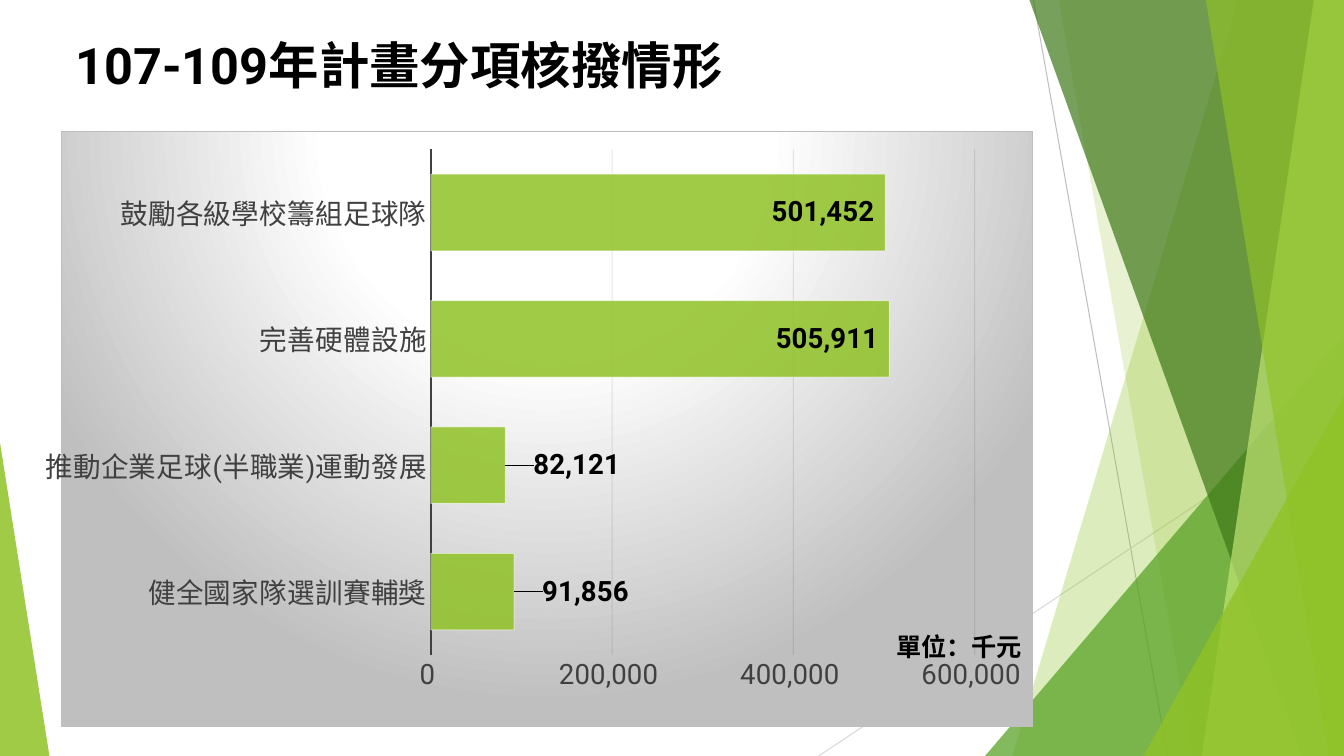
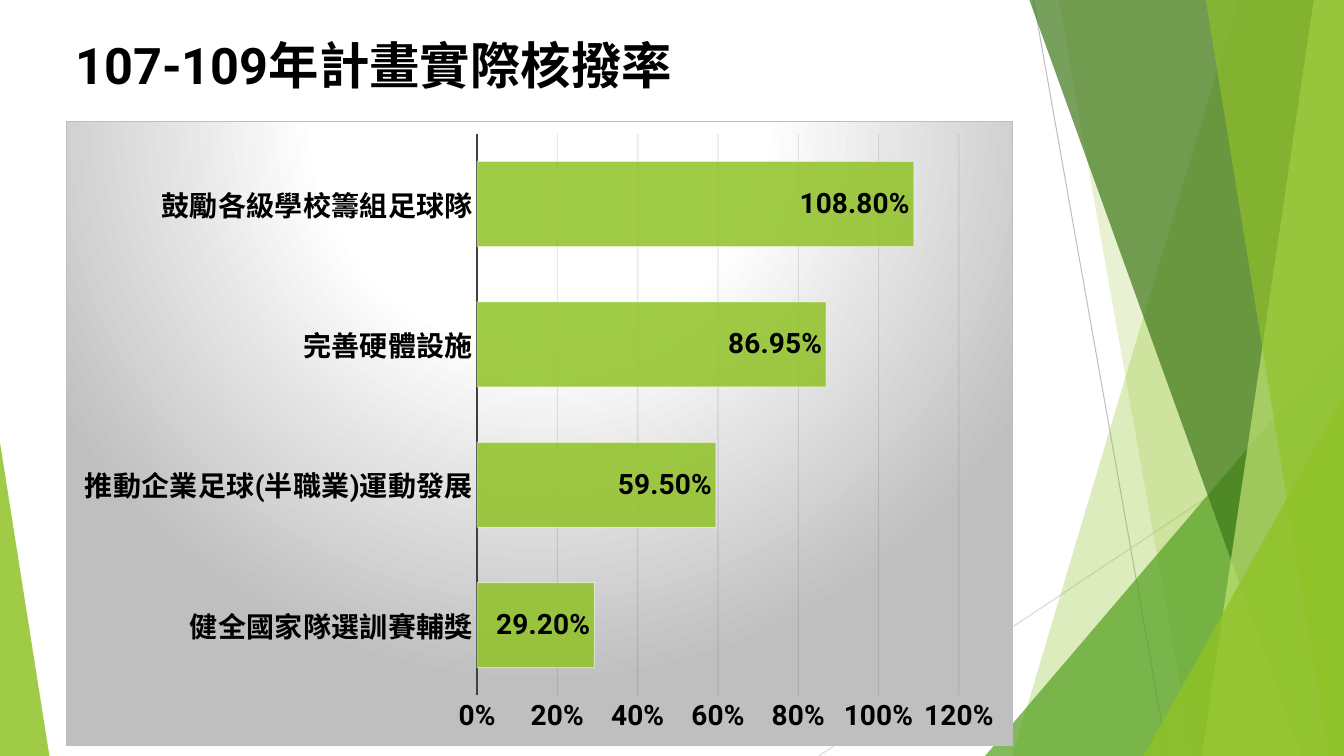
from dataclasses import dataclass
from typing import Any

import pptx
import pptx.chart.data
import pptx.dml.color
import pptx.enum.chart
import pptx.enum.shapes
import pptx.enum.text
import pptx.oxml
import pptx.oxml.ns
import pptx.util

Inches = pptx.util.Inches
Pt = pptx.util.Pt
RGBColor = pptx.dml.color.RGBColor
qn = pptx.oxml.ns.qn

# Shared look
FONT = "Roboto"
BLACK = RGBColor(0x00, 0x00, 0x00)
WHITE = RGBColor(0xFF, 0xFF, 0xFF)
CHARCOAL = RGBColor(0x40, 0x40, 0x40)
GRID = RGBColor(0x0D, 0x0D, 0x0D)
SILVER = RGBColor(0xBF, 0xBF, 0xBF)
PALE_GRAY = RGBColor(0xD9, 0xD9, 0xD9)
LIME = RGBColor(0x90, 0xC2, 0x26)
LIGHT_LIME = RGBColor(0xC0, 0xE4, 0x74)
GREEN = RGBColor(0x54, 0xA0, 0x21)
DARK_GREEN = RGBColor(0x3F, 0x78, 0x19)

SLIDE_W, SLIDE_H = 13.33, 7.5
TITLE_FONT = {"name": FONT, "size": Pt(36), "bold": True}
UNIT_FONT = {"name": FONT, "size": Pt(18), "bold": True}
CHART_FONT = {"name": FONT, "size": Pt(20), "bold": False}
LABEL_FONT = {"name": FONT, "size": Pt(20), "bold": True}

THOUSANDS = r"#,##0_);[Red]\(#,##0\)"
CATEGORIES = ["健全國家隊選訓賽輔獎", "推動企業足球(半職業)運動發展",
              "完善硬體設施", "鼓勵各級學校籌組足球隊"]


@dataclass
class Rule:
    """Thin background line."""
    start: tuple[float, float]
    end: tuple[float, float]
    color: RGBColor


@dataclass
class Blade:
    """Slanted left edge, filled out to the right side of the slide."""
    top_x: float
    bottom_x: float
    color: RGBColor
    opacity: int


@dataclass
class Corner:
    """Right triangle standing on the bottom of the slide."""
    left: float
    top: float
    width: float
    apex: float
    color: RGBColor
    opacity: int


@dataclass
class ChartSlide:
    title: str
    box: tuple[float, float, float, float]
    values: list[float]
    axis_format: str
    label_format: str
    axis_font: dict[str, Any]
    axis_color: RGBColor
    plot: tuple[float, float, float, float] | None = None
    outside_points: tuple[int, ...] = ()
    unit: str = ""


BACKDROP = [
    Rule((10.25, 0), (11.58, SLIDE_H), SILVER),
    Rule((SLIDE_W, 4.03), (8.12, SLIDE_H), PALE_GRAY),
    Blade(12.28, 10.04, LIME, 30),
    Blade(10.5, 11.83, LIME, 20),
    Corner(9.77, 3.33, 3.56, 1, GREEN, 72),
    Blade(10.21, 12.91, DARK_GREEN, 70),
    Blade(13.03, 11.92, LIGHT_LIME, 70),
    Blade(11.96, 13.18, LIME, 65),
    Corner(11.34, 3.93, 1.99, 1, LIME, 80),
    Corner(0, 4.39, 0.49, 0, LIME, 85),
]

SLIDES = [
    ChartSlide("107-109年計畫分項核撥情形", (0.45, 1.3, 9.8, 5.91),
               [91856, 82121, 505911, 501452], THOUSANDS, THOUSANDS,
               CHART_FONT, CHARCOAL, plot=(0.38, 0.03, 0.56, 0.85),
               outside_points=(0, 1), unit="單位：千元"),
    ChartSlide("107-109年計畫實際核撥率", (0.65, 1.2, 9.4, 6.2),
               [0.292, 0.595, 0.8695, 1.088], "0%", "0.00%",
               LABEL_FONT, BLACK),
]


def apply(obj: Any, fmt: dict[str, Any]) -> None:
    for key, value in fmt.items():
        setattr(obj, key, value)


def style_font(font: Any, fmt: dict[str, Any], color: RGBColor) -> None:
    apply(font, fmt)
    font.color.rgb = color


def style_line(line: Any, color: RGBColor, width: float = 0.75) -> None:
    line.color.rgb = color
    line.width = Pt(width)


def xml(tag: str, inner: str = "") -> Any:
    ns = pptx.oxml.ns.nsdecls("a", "c")
    return pptx.oxml.parse_xml(f"<{tag} {ns}>{inner}</{tag}>")


def set_opacity(clr: Any, percent: int) -> None:
    alpha = xml("a:alpha")
    alpha.set("val", str(percent * 1000))
    clr.append(alpha)


# Backdrop
def draw_part(shapes: Any, part: Rule | Blade | Corner) -> Any:
    if isinstance(part, Rule):
        ends = [Inches(v) for v in (*part.start, *part.end)]
        sp = shapes.add_connector(
            pptx.enum.shapes.MSO_CONNECTOR.STRAIGHT, *ends)
        style_line(sp.line, part.color)
        sp.element.spPr.append(xml("a:effectLst"))
        return sp
    if isinstance(part, Blade):
        outline = shapes.build_freeform(Inches(part.top_x), 0)
        corners = [(SLIDE_W, 0), (SLIDE_W, SLIDE_H), (part.bottom_x, SLIDE_H)]
        outline.add_line_segments([(Inches(x), Inches(y)) for x, y in corners])
        sp = outline.convert_to_shape()
    else:
        sp = shapes.add_shape(
            pptx.enum.shapes.MSO_SHAPE.ISOSCELES_TRIANGLE,
            Inches(part.left), Inches(part.top),
            Inches(part.width), Inches(SLIDE_H - part.top))
        sp.adjustments[0] = part.apex
    sp.shadow.inherit = False
    sp.fill.solid()
    sp.fill.fore_color.rgb = part.color
    set_opacity(next(sp.element.spPr.iter(qn("a:srgbClr"))), part.opacity)
    sp.line.fill.background()
    return sp


def build_layout(layout: Any, slide: Any) -> None:
    """Draw the backdrop on a slide and move it behind the layout's title."""
    for i, part in enumerate(BACKDROP):
        el = draw_part(slide.shapes, part).element
        el.xpath(".//p:cNvPr")[0].set("id", str(100 + i))
        layout.shapes.element.insert(2 + i, el)
    apply(layout.placeholders[0], {
        "left": Inches(0.65), "top": Inches(0.29),
        "width": Inches(9.4), "height": Inches(0.82)})


# Chart
def style_frame(chart: Any) -> None:
    """Radial gray background and thin border."""
    stops = "".join(
        f'<a:gs pos="{pos * 1000}"><a:srgbClr val="{color}"/></a:gs>'
        for pos, color in ((0, WHITE), (39, WHITE), (100, SILVER)))
    sp_pr = xml("c:spPr", f'''<a:gradFill><a:gsLst>{stops}</a:gsLst>
        <a:path path="circle">
        <a:fillToRect l="50000" t="-80000" r="50000" b="180000"/>
        </a:path></a:gradFill>
        <a:ln w="{Pt(0.75)}"><a:solidFill><a:srgbClr val="{SILVER}"/>
        </a:solidFill></a:ln>''')
    chart.element.find(qn("c:chart")).addnext(sp_pr)


def set_plot_area(chart: Any, plot: tuple[float, ...]) -> None:
    area = chart.element.find(".//" + qn("c:plotArea"))
    for old in area.findall(qn("c:layout")):
        area.remove(old)
    modes = '<c:xMode val="edge"/><c:yMode val="edge"/>'
    sizes = "".join(f'<c:{k} val="{v}"/>' for k, v in zip("xywh", plot))
    area.insert(0, xml("c:layout", "<c:manualLayout>"
                       f'<c:layoutTarget val="inner"/>{modes}{sizes}'
                       "</c:manualLayout>"))


def style_axes(chart: Any, spec: ChartSlide) -> None:
    for axis in (chart.category_axis, chart.value_axis):
        axis.major_tick_mark = pptx.enum.chart.XL_TICK_MARK.NONE
        axis.minor_tick_mark = pptx.enum.chart.XL_TICK_MARK.NONE
        style_font(axis.tick_labels.font, spec.axis_font, spec.axis_color)
    style_line(chart.category_axis.format.line, CHARCOAL, 1.5)
    axis = chart.value_axis
    apply(axis.tick_labels, {"number_format": spec.axis_format,
                             "number_format_is_linked": False})
    axis.format.line.fill.background()
    style_line(axis.major_gridlines.format.line, GRID)
    grid = chart.element.find(".//" + qn("c:majorGridlines"))
    set_opacity(next(grid.iter(qn("a:srgbClr"))), 10)


def style_bars(chart: Any, spec: ChartSlide) -> None:
    positions = pptx.enum.chart.XL_LABEL_POSITION
    plot = chart.plots[0]
    apply(plot, {"gap_width": 65, "vary_by_categories": False})
    ser = plot.series[0]
    ser.format.fill.solid()
    ser.format.fill.fore_color.rgb = LIME
    style_line(ser.format.line, WHITE)
    ser_pr = chart.element.find(".//" + qn("c:ser")).find(qn("c:spPr"))
    for clr, percent in zip(list(ser_pr.iter(qn("a:srgbClr"))), (85, 50)):
        set_opacity(clr, percent)

    labels = ser.data_labels
    apply(labels, {"show_value": True, "position": positions.INSIDE_END,
                   "number_format": spec.label_format,
                   "number_format_is_linked": False})
    style_font(labels.font, LABEL_FONT, BLACK)
    for i in spec.outside_points:
        label = ser.points[i].data_label
        label.position = positions.OUTSIDE_END
        style_font(label.font, LABEL_FONT, BLACK)
    # Nudge the outside labels away from the bar ends
    for d_lbl in chart.element.iter(qn("c:dLbl")):
        d_lbl.find(qn("c:idx")).addnext(xml(
            "c:layout", '<c:manualLayout><c:x val="0.025"/><c:y val="0"/>'
            "</c:manualLayout>"))


def add_bar_chart(slide: Any, spec: ChartSlide) -> None:
    data = pptx.chart.data.CategoryChartData(number_format=spec.label_format)
    data.categories = CATEGORIES
    data.add_series("Series 1", spec.values)
    chart = slide.shapes.add_chart(
        pptx.enum.chart.XL_CHART_TYPE.BAR_CLUSTERED,
        *[Inches(v) for v in spec.box], data).chart
    apply(chart, {"has_title": False, "has_legend": False})
    style_font(chart.font, spec.axis_font, BLACK)
    style_frame(chart)
    style_axes(chart, spec)
    style_bars(chart, spec)
    if spec.plot:
        set_plot_area(chart, spec.plot)


# Slide text
def set_text(tf: Any, text: str, fmt: dict[str, Any]) -> None:
    p = tf.paragraphs[0]
    p.alignment = pptx.enum.text.PP_ALIGN.LEFT
    r = p.add_run()
    r.text = text
    style_font(r.font, fmt, BLACK)


def fill_slide(slide: Any, spec: ChartSlide) -> None:
    tf = slide.shapes.title.text_frame
    tf.vertical_anchor = pptx.enum.text.MSO_ANCHOR.TOP
    set_text(tf, spec.title, TITLE_FONT)
    add_bar_chart(slide, spec)
    if spec.unit:
        box = [Inches(v) for v in (8.79, 6.21, 1.46, 0.4)]
        tf = slide.shapes.add_textbox(*box).text_frame
        apply(tf, {"word_wrap": False, "auto_size":
                   pptx.enum.text.MSO_AUTO_SIZE.SHAPE_TO_FIT_TEXT})
        set_text(tf, spec.unit, UNIT_FONT)


def main() -> None:
    prs = pptx.Presentation()
    apply(prs, {"slide_width": Inches(SLIDE_W),
                "slide_height": Inches(SLIDE_H)})
    layout = prs.slide_layouts.get_by_name("Title Only")
    slides = [prs.slides.add_slide(layout) for _ in SLIDES]
    build_layout(layout, slides[0])
    for slide, spec in zip(slides, SLIDES):
        fill_slide(slide, spec)
    prs.save("out.pptx")


if __name__ == "__main__":
    main()
